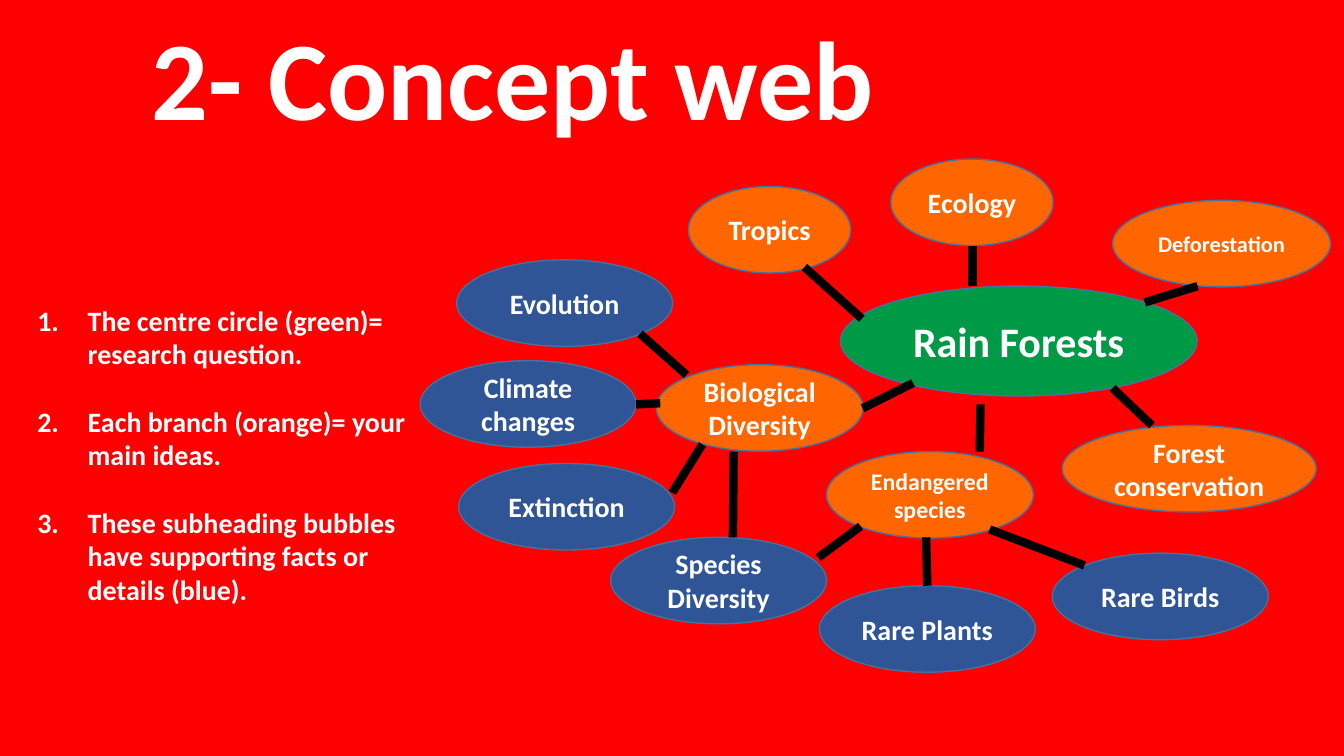
from lxml.etree import SubElement
from pptx import Presentation
from pptx.dml.color import RGBColor
from pptx.enum.shapes import MSO_CONNECTOR, MSO_SHAPE
from pptx.enum.text import MSO_ANCHOR, PP_ALIGN
from pptx.oxml.ns import qn
from pptx.util import Cm, Pt

COLORS = {
    "background": "FF0000",
    "question": "009A46",
    "idea": "FF6600",
    "detail": "2F5597",
    "outline": "43739E",
    "branch": "000000",
    "text": "FFFFFF",
}


def color(name):
    return RGBColor.from_string(COLORS[name])


def add_bold_run(paragraph, text, size):
    run = paragraph.add_run()
    run.text = text
    run.font.name = "Calibri"
    run.font.size = Pt(size)
    run.font.bold = True
    run.font.color.rgb = color("text")


presentation = Presentation()
presentation.slide_width = Cm(33.87)
presentation.slide_height = Cm(19.05)
slide = presentation.slides.add_slide(presentation.slide_layouts[6])
slide.background.fill.solid()
slide.background.fill.fore_color.rgb = color("background")

# Title
title = slide.shapes.add_textbox(Cm(3.58), Cm(0.08), Cm(18.87), Cm(3.68))
title.text_frame.word_wrap = False
add_bold_run(title.text_frame.paragraphs[0], "2- Concept web", 80)

# Numbered instructions
instructions = [
    "The centre circle (green)= research question.",
    "Each branch (orange)= your main ideas.",
    "These subheading bubbles have supporting facts or details (blue).",
]
instruction_box = slide.shapes.add_textbox(Cm(0.69), Cm(7.52), Cm(9.91), Cm(7.95))
frame = instruction_box.text_frame
frame.word_wrap = True
for index, instruction in enumerate(instructions):
    paragraph = frame.add_paragraph() if index else frame.paragraphs[0]
    if index:
        paragraph.space_before = Pt(24)
    add_bold_run(paragraph, instruction, 20)
    properties = paragraph._p.get_or_add_pPr()
    properties.set("marL", str(Cm(1.27)))
    properties.set("indent", str(-Cm(1.27)))
    SubElement(properties, qn("a:buFont"), typeface="+mj-lt")
    SubElement(properties, qn("a:buAutoNum"), type="arabicPeriod")

# Bubbles: text, level, left, top, width, height, text size
bubbles = [
    ("Rain Forests", "question", 21.18, 7.21, 8.99, 2.77, 30),
    ("Ecology", "idea", 22.45, 4.01, 4.09, 2.18, 20),
    ("Biological Diversity", "idea", 16.54, 9.19, 5.21, 2.18, 20),
    ("Forest conservation", "idea", 26.77, 10.72, 6.4, 2.18, 20),
    ("Endangered species", "idea", 20.83, 11.38, 5.21, 2.18, 17),
    ("Deforestation", "idea", 28.04, 5.05, 5.49, 2.18, 16),
    ("Tropics", "idea", 17.35, 4.7, 4.09, 2.18, 20),
    ("Extinction", "detail", 11.56, 11.68, 5.44, 2.18, 20),
    ("Rare Birds", "detail", 26.52, 13.94, 5.44, 2.18, 20),
    ("Rare Plants", "detail", 20.65, 14.76, 5.44, 2.18, 20),
    ("Species Diversity", "detail", 15.39, 13.54, 5.44, 2.18, 20),
    ("Evolution", "detail", 11.51, 6.55, 5.44, 2.18, 20),
    ("Climate changes", "detail", 10.59, 9.09, 5.44, 2.18, 20),
]
for text, level, left, top, width, height, size in bubbles:
    bubble = slide.shapes.add_shape(
        MSO_SHAPE.OVAL, Cm(left), Cm(top), Cm(width), Cm(height))
    bubble.shadow.inherit = False
    bubble.fill.solid()
    bubble.fill.fore_color.rgb = color(level)
    bubble.line.color.rgb = color("outline")
    bubble.line.width = Pt(1)
    bubble.text_frame.word_wrap = True
    bubble.text_frame.vertical_anchor = MSO_ANCHOR.MIDDLE
    paragraph = bubble.text_frame.paragraphs[0]
    paragraph.alignment = PP_ALIGN.CENTER
    add_bold_run(paragraph, text, size)

# Branches: start x, start y, end x, end y
branches = [
    # Rain Forests to the main ideas
    (21.72, 8.03, 20.27, 6.73),
    (24.51, 7.21, 24.51, 6.2),
    (30.18, 7.21, 28.85, 7.62),
    (28.04, 9.78, 29.03, 10.72),
    (24.71, 10.19, 24.69, 11.38),
    (23.01, 9.65, 21.74, 10.29),
    # Endangered species to its details
    (23.34, 13.54, 23.37, 14.76),
    (21.69, 13.26, 20.62, 14.05),
    (24.94, 13.34, 27.33, 14.25),
    # Biological Diversity to its details
    (16.13, 8.41, 17.3, 9.45),
    (17.7, 11.2, 16.94, 12.42),
    (16.64, 10.16, 16.03, 10.19),
    (18.49, 11.38, 18.47, 13.54),
]
for points in branches:
    branch = slide.shapes.add_connector(
        MSO_CONNECTOR.STRAIGHT, *[Cm(value) for value in points])
    branch.line.color.rgb = color("branch")
    branch.line.width = Pt(6)
    SubElement(branch._element.spPr, qn("a:effectLst"))

presentation.save("out.pptx")
